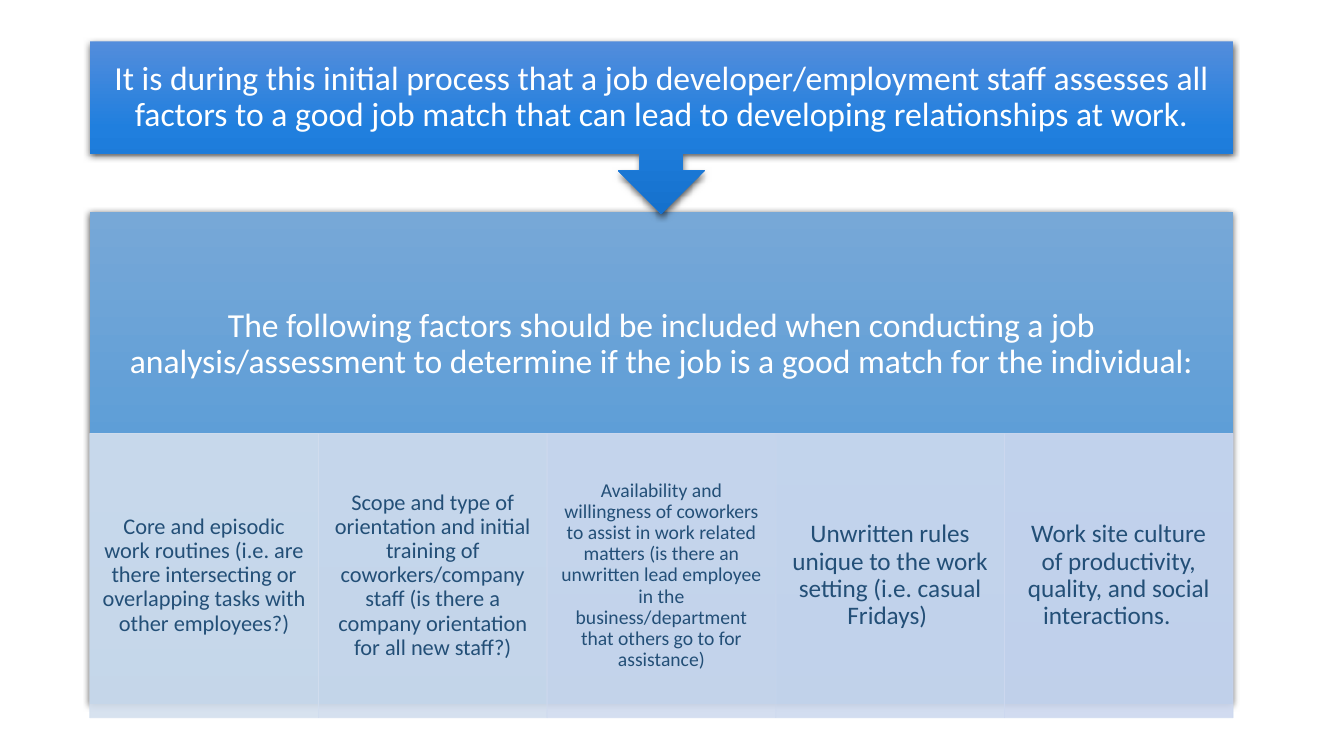
from lxml.etree import SubElement
from pptx import Presentation
from pptx.dml.color import RGBColor
from pptx.enum.shapes import MSO_SHAPE
from pptx.enum.text import MSO_ANCHOR, PP_ALIGN
from pptx.oxml.ns import qn
from pptx.util import Inches, Pt

LEFT, WIDTH = 0.89, 11.34
PANEL_TOP, PANEL_HEIGHT, HEADING_HEIGHT = 2.1, 4.88, 2.64
FACTOR_TOP, FACTOR_HEIGHT = 4.3, 2.82

INTRODUCTION = (
    "It is during this initial process that a job developer/employment staff "
    "assesses all factors to a good job match that can lead to developing "
    "relationships at work."
)
HEADING = (
    "The following factors should be included when conducting a job "
    "analysis/assessment to determine if the job is a good match for the individual:"
)
FACTORS = [
    ("Core and episodic work routines (i.e. are there intersecting or "
     "overlapping tasks with other employees?)", 16, 0.12, "D3DFEE"),
    ("Scope and type of orientation and initial training of coworkers/company "
     "staff (is there a company orientation for all new staff?)", 16, 0.12, "D1DDEE"),
    ("Availability and willingness of coworkers to assist in work related matters "
     "(is there an unwritten lead employee in the business/department that others "
     "go to for assistance)", 14, 0.11, "D0DBEF"),
    ("Unwritten rules unique to the work setting (i.e. casual Fridays) ",
     18, 0.14, "CEDAEF"),
    ("Work site culture of productivity, quality, and social interactions.\t",
     18, 0.14, "CDD8EF"),
]


def color(value):
    return RGBColor.from_string(value)


def add_block(page, kind, left, top, width, height):
    block = page.shapes.add_shape(
        kind, Inches(left), Inches(top), Inches(width), Inches(height))
    block.shadow.inherit = False
    return block


def write_text(block, text, size, ink, margins):
    frame = block.text_frame
    frame.word_wrap = True
    frame.vertical_anchor = MSO_ANCHOR.MIDDLE
    left, top, right, bottom = (Inches(margin) for margin in margins)
    frame.margin_left, frame.margin_top = left, top
    frame.margin_right, frame.margin_bottom = right, bottom
    para = frame.paragraphs[0]
    para.alignment = PP_ALIGN.CENTER
    para.line_spacing = 0.9
    span = para.add_run()
    span.text = text
    span.font.name = "Calibri"
    span.font.size = Pt(size)
    span.font.color.rgb = color(ink)


def fill_gradient(block, stops):
    block.fill.gradient()
    block.fill.gradient_angle = 270
    stop_list = block._element.spPr.find(".//" + qn("a:gsLst"))
    for stop in list(stop_list):
        stop_list.remove(stop)
    for position, value in stops:
        stop = SubElement(stop_list, qn("a:gs"), pos=str(position * 1000))
        SubElement(stop, qn("a:srgbClr"), val=value)


def add_shadow(block):
    effects = block._element.spPr.find(qn("a:effectLst"))
    shadow = SubElement(effects, qn("a:outerShdw"), blurRad=str(Pt(4.5)),
                        dist=str(Pt(1.5)), dir="5400000", algn="ctr", rotWithShape="0")
    shade = SubElement(shadow, qn("a:srgbClr"), val="000000")
    SubElement(shade, qn("a:alpha"), val="63000")


def add_banner(page, kind, top, height, stops, text, bottom_margin=0.19):
    banner = add_block(page, kind, LEFT, top, WIDTH, height)
    fill_gradient(banner, stops)
    banner.line.fill.background()
    add_shadow(banner)
    write_text(banner, text, 24, "FFFFFF", (0.19, 0.19, 0.19, bottom_margin))


def add_factor(page, index, text, size, margin, tint):
    width = WIDTH / len(FACTORS)
    factor = add_block(page, MSO_SHAPE.RECTANGLE, LEFT + index * width,
                       FACTOR_TOP, width, FACTOR_HEIGHT)
    factor.fill.solid()
    factor.fill.fore_color.rgb = color(tint)
    factor.line.color.rgb = color(tint)
    factor.line.width = Pt(0.5)
    for paint in factor._element.spPr.iter(qn("a:srgbClr")):
        SubElement(paint, qn("a:alpha"), val="90000")
    write_text(factor, text, size, "234F77", (margin, 0.02, margin, 0.02))


def main():
    deck = Presentation()
    deck.slide_width, deck.slide_height = Inches(13.33), Inches(7.5)
    page = deck.slides.add_slide(deck.slide_layouts[6])
    add_banner(page, MSO_SHAPE.RECTANGLE, PANEL_TOP, PANEL_HEIGHT,
               [(0, "77A8D7"), (50, "5C9DD7"), (100, "4C8CC5")], HEADING,
               bottom_margin=PANEL_HEIGHT - HEADING_HEIGHT + 0.19)
    for index, factor in enumerate(FACTORS):
        add_factor(page, index, *factor)
    add_banner(page, MSO_SHAPE.DOWN_ARROW_CALLOUT, 0.41, 1.71,
               [(0, "538DDC"), (50, "207FDE"), (100, "1571CD")], INTRODUCTION)
    deck.save("out.pptx")


if __name__ == "__main__":
    main()
